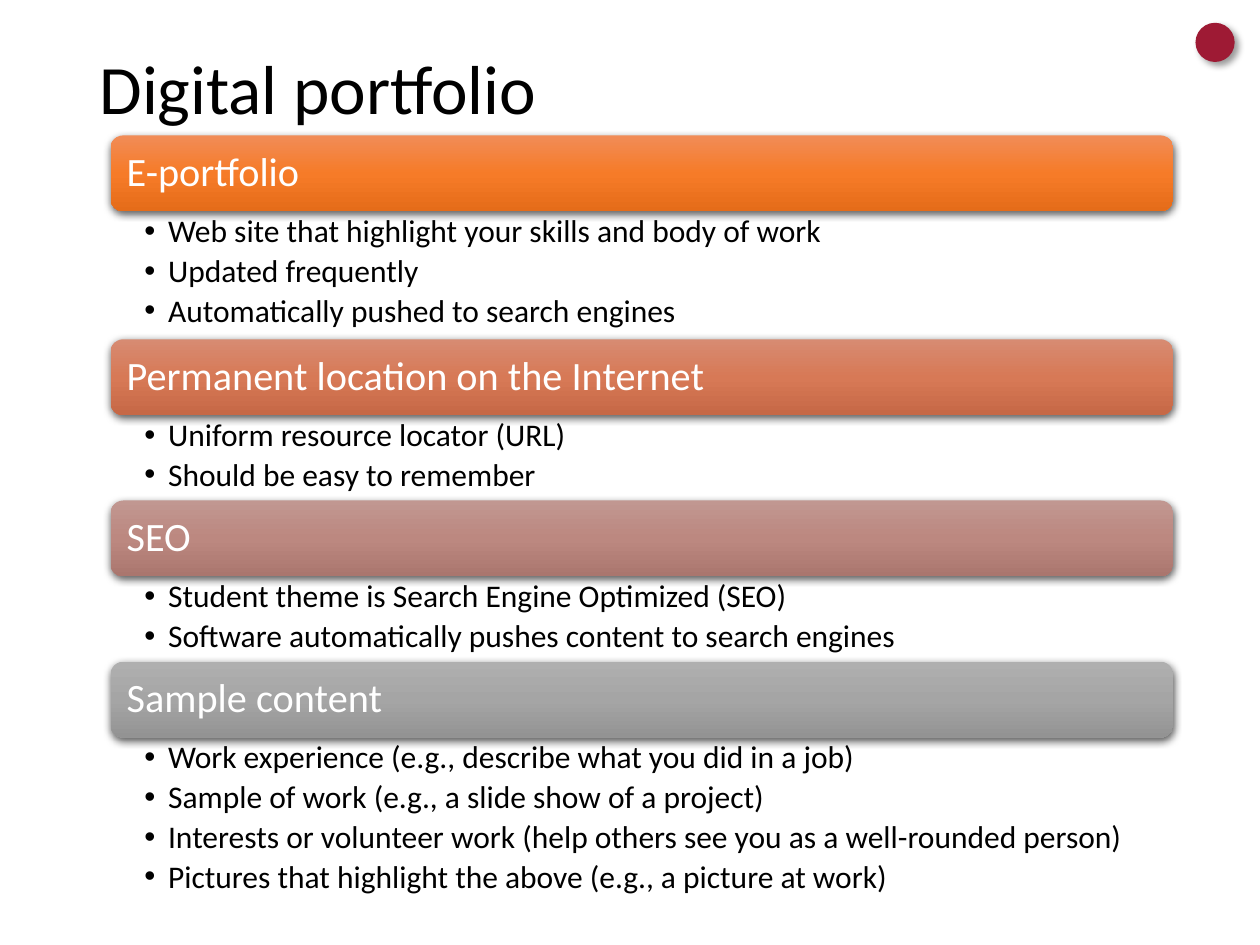
from copy import deepcopy

from lxml import etree
from pptx import Presentation
from pptx.dml.color import RGBColor
from pptx.enum.shapes import MSO_SHAPE
from pptx.enum.text import MSO_ANCHOR, MSO_AUTO_SIZE, PP_ALIGN
from pptx.oxml.ns import qn
from pptx.util import Cm, Pt

TITLE = "Digital portfolio"
SECTIONS = [
    ("E-portfolio", ("F18C57", "F67B28", "E56C19"), [
        "Web site that highlight your skills and body of work",
        "Updated frequently",
        "Automatically pushed to search engines",
    ]),
    ("Permanent location on the Internet", ("D78B72", "D77956", "C66846"), [
        "Uniform resource locator (URL)",
        "Should be easy to remember",
    ]),
    ("SEO", ("C19791", "BC8880", "AA766E"), [
        "Student theme is Search Engine Optimized (SEO)",
        "Software automatically pushes content to search engines",
    ]),
    ("Sample content", ("AFAFAF", "A5A5A5", "939393"), [
        "Work experience (e.g., describe what you did in a job)",
        "Sample of work (e.g., a slide show of a project)",
        "Interests or volunteer work (help others see you as a well-rounded person)",
        "Pictures that highlight the above (e.g., a picture at work)",
    ]),
]

THEME = {
    "font": "Calibri", "title": 39.6, "heading": 23, "bullet": 18,
    "dark": "000000", "light": "FFFFFF", "dot": "9E1A34",
}
LEFT, TOP, WIDTH = 2.23, 2.73, 21.42
BAR_HEIGHT, BULLET_HEIGHT = 1.53, 0.86


def style(paragraph, size, color):
    paragraph.alignment = PP_ALIGN.LEFT
    paragraph.line_spacing = 0.9
    paragraph.font.name = THEME["font"]
    paragraph.font.size = Pt(THEME[size])
    paragraph.font.color.rgb = RGBColor.from_string(THEME[color])


def set_insets(frame, left, top, right, bottom):
    frame.margin_left, frame.margin_top = Cm(left), Cm(top)
    frame.margin_right, frame.margin_bottom = Cm(right), Cm(bottom)
    frame.word_wrap = True


def add_shadow(shape, opacity, blur, distance, angle):
    shape.shadow.inherit = False
    effects = shape.element.spPr.find(qn("a:effectLst"))
    shadow = etree.SubElement(
        effects, qn("a:outerShdw"), blurRad=str(Pt(blur)), dist=str(Pt(distance)),
        dir=str(angle * 60000), algn="ctr", rotWithShape="0")
    color = etree.SubElement(shadow, qn("a:srgbClr"), val="000000")
    etree.SubElement(color, qn("a:alpha"), val=str(opacity * 1000))


def fill_gradient(shape, colors):
    shape.fill.gradient()
    shape.fill.gradient_angle = 270
    stops = shape.element.spPr.find(".//" + qn("a:gsLst"))
    stops.insert(1, deepcopy(stops[0]))
    for index, (stop, color) in enumerate(zip(shape.fill.gradient_stops, colors)):
        stop.position = index / (len(colors) - 1)
        stop.color.rgb = RGBColor.from_string(color)


def add_heading(slide, heading, colors, top):
    bar = slide.shapes.add_shape(
        MSO_SHAPE.ROUNDED_RECTANGLE, Cm(LEFT), Cm(top), Cm(WIDTH), Cm(BAR_HEIGHT))
    fill_gradient(bar, colors)
    bar.line.fill.background()
    add_shadow(bar, 63, 4.5, 1.5, 90)
    frame = bar.text_frame
    set_insets(frame, 0.25, 0.25, 0.25, 0.25)
    frame.vertical_anchor = MSO_ANCHOR.MIDDLE
    frame.text = heading
    style(frame.paragraphs[0], "heading", "light")


def add_bullets(slide, bullets, top, height):
    frame = slide.shapes.add_textbox(
        Cm(LEFT), Cm(top), Cm(WIDTH), Cm(height)).text_frame
    set_insets(frame, 0.68, 0.08, 0.45, 0.08)
    frame.text = "\n".join(bullets)
    for paragraph in frame.paragraphs:
        properties = paragraph._p.get_or_add_pPr()
        properties.set("marL", str(Cm(0.48)))
        properties.set("indent", str(Cm(-0.48)))
        etree.SubElement(properties, qn("a:buFont"), typeface="Arial")
        etree.SubElement(properties, qn("a:buChar"), char="•")
        style(paragraph, "bullet", "dark")
        paragraph.space_after = Pt(3.3)


def main():
    deck = Presentation()
    deck.slide_width, deck.slide_height = Cm(25.4), Cm(19.05)
    slide = deck.slides.add_slide(deck.slide_layouts[5])

    title = slide.shapes.title
    title.left, title.top, title.width, title.height = Cm(1.75), Cm(1.02), Cm(21.9), Cm(1.68)
    title.text_frame.text = TITLE
    title.text_frame.auto_size = MSO_AUTO_SIZE.NONE
    title.text_frame.vertical_anchor = MSO_ANCHOR.MIDDLE
    style(title.text_frame.paragraphs[0], "title", "dark")

    top = TOP
    for heading, colors, bullets in SECTIONS:
        add_heading(slide, heading, colors, top)
        top += BAR_HEIGHT
        height = BULLET_HEIGHT * len(bullets)
        add_bullets(slide, bullets, top, height)
        top += height

    dot = slide.shapes.add_shape(MSO_SHAPE.OVAL, Cm(24.1), Cm(0.46), Cm(0.79), Cm(0.79))
    dot.fill.solid()
    dot.fill.fore_color.rgb = RGBColor.from_string(THEME["dot"])
    dot.line.fill.background()
    add_shadow(dot, 40, 4, 3, 45)

    deck.save("out.pptx")


if __name__ == "__main__":
    main()
